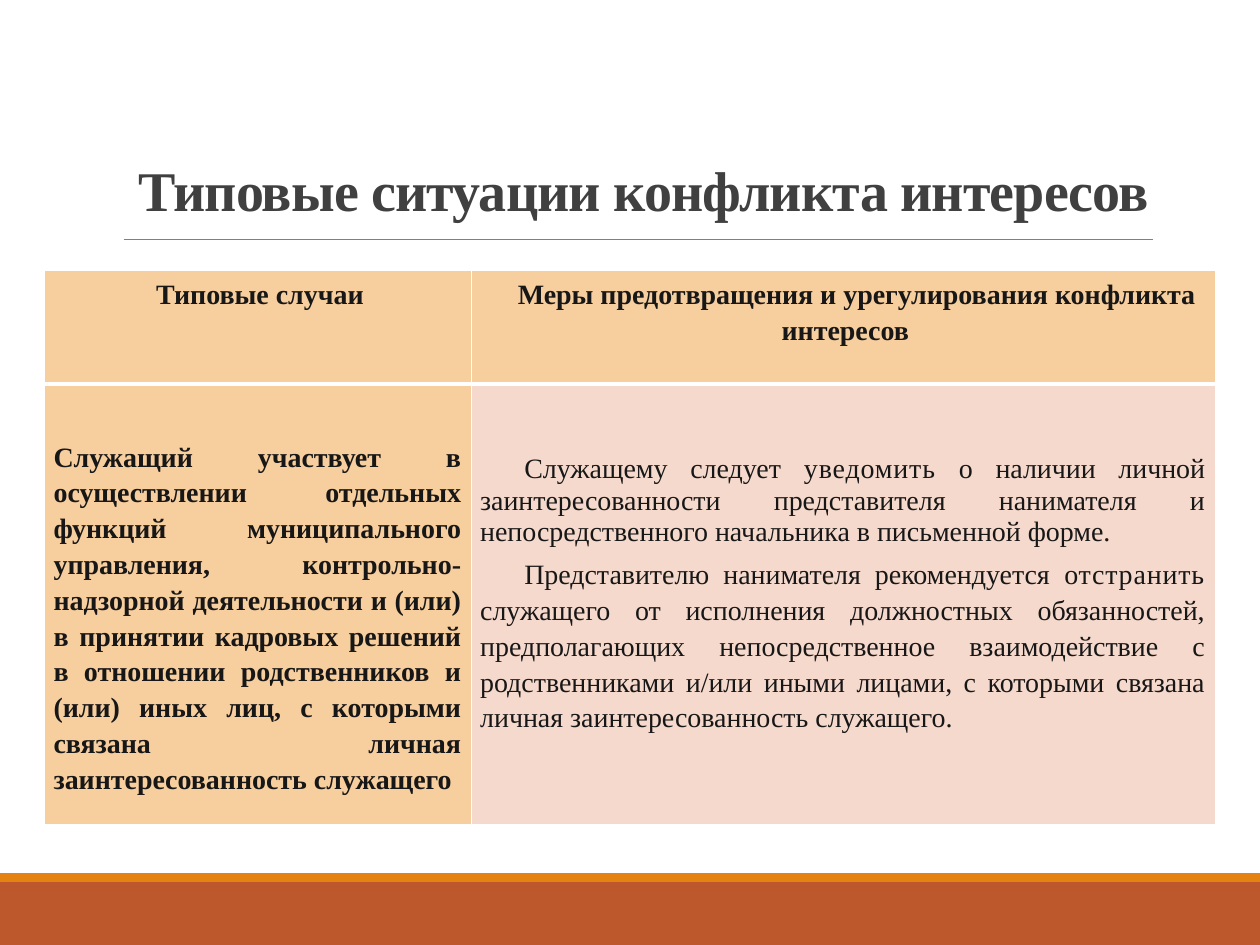
from dataclasses import dataclass

from lxml.etree import SubElement
from pptx import Presentation
from pptx.dml.color import RGBColor
from pptx.enum.shapes import MSO_CONNECTOR as Connector, MSO_SHAPE as Shape
from pptx.enum.text import MSO_ANCHOR as Anchor, MSO_AUTO_SIZE as AutoSize, PP_ALIGN as Align
from pptx.oxml.ns import qn
from pptx.util import Cm, Pt


@dataclass(frozen=True)
class Theme:
    face: str = "Times New Roman"
    title_size: int = 32
    table_size: int = 16
    title_ink: str = "404040"
    table_ink: str = "181717"
    rule: str = "808080"
    band: str = "BD582C"
    stripe: str = "E48312"
    heading_fill: str = "F7CE9D"
    measure_fill: str = "F5D9CC"
    border: str = "FFFFFF"


@dataclass(frozen=True)
class Box:
    left: float
    top: float
    width: float
    height: float

    def lengths(self):
        return Cm(self.left), Cm(self.top), Cm(self.width), Cm(self.height)


THEME = Theme()

CASE = ("Служащий участвует в осуществлении отдельных функций муниципального управления, "
        "контрольно-надзорной деятельности и (или) в принятии кадровых решений в отношении "
        "родственников и (или) иных лиц, с которыми связана личная заинтересованность служащего")
NOTIFY = [("Служащему следует ", 0), ("уведомить", 0.5),
          (" о наличии личной заинтересованности представителя нанимателя и "
           "непосредственного начальника в письменной форме.", 0)]
SUSPEND = [("Представителю нанимателя рекомендуется ", 0), ("отстранить ", 0.5),
           ("служащего от исполнения должностных обязанностей, предполагающих "
            "непосредственное взаимодействие с родственниками и/или иными лицами, "
            "с которыми связана личная заинтересованность служащего.", 0)]

HEADING = {"alignment": Align.CENTER, "line_spacing": 1.15}
JUSTIFIED = {"alignment": Align.JUSTIFY, "line_spacing": 1.15}
SPACED = {"alignment": Align.JUSTIFY, "line_spacing": 1.01, "space_after": Pt(4.3)}


def apply(target, values):
    for name, value in values.items():
        setattr(target, name, value)


def write(paragraph, pieces, layout, size, ink, bold, margin=0, indent=0):
    apply(paragraph, layout)
    properties = paragraph._p.get_or_add_pPr()
    properties.set("marL", str(Cm(margin)))
    properties.set("indent", str(Cm(indent)))
    for text, spacing in pieces:
        run = paragraph.add_run()
        run.text = text
        apply(run.font, {"name": THEME.face, "size": Pt(size), "bold": bold})
        run.font.color.rgb = RGBColor.from_string(ink)
        run._r.get_or_add_rPr().set("spc", str(int(spacing * 100)))


def add_footer(slide, box, stripe_height):
    stripe = Box(box.left, box.top, box.width, stripe_height)
    band = Box(box.left, box.top + stripe_height, box.width, box.height - stripe_height)
    for part, color in ((band, THEME.band), (stripe, THEME.stripe)):
        bar = slide.shapes.add_shape(Shape.RECTANGLE, *part.lengths())
        bar.shadow.inherit = False
        bar.fill.solid()
        bar.fill.fore_color.rgb = RGBColor.from_string(color)
        bar.line.fill.background()


def add_title(slide, box, rule_top, rule_width):
    title = slide.shapes.title
    apply(title, dict(zip(("left", "top", "width", "height"), box.lengths())))
    apply(title.text_frame, {"word_wrap": True, "auto_size": AutoSize.NONE,
                             "vertical_anchor": Anchor.BOTTOM,
                             "margin_left": Cm(0.1), "margin_right": Cm(0.1)})
    write(title.text_frame.paragraphs[0], [("Типовые ситуации конфликта интересов", -0.5)],
          {"alignment": Align.CENTER, "line_spacing": 0.85},
          THEME.title_size, THEME.title_ink, True)

    rule_y = Cm(box.top + rule_top)
    rule = slide.shapes.add_connector(Connector.STRAIGHT, Cm(box.left), rule_y,
                                      Cm(box.left + rule_width), rule_y)
    rule.line.width = Pt(0.5)
    rule.line.color.rgb = RGBColor.from_string(THEME.rule)
    SubElement(rule._element.spPr, qn("a:effectLst"))


def style_cell(cell, fill, anchor, top_inset, bottom_border):
    apply(cell, {"vertical_anchor": anchor, "margin_left": Cm(0.18), "margin_right": Cm(0.2),
                 "margin_top": Cm(top_inset), "margin_bottom": 0})
    properties = cell._tc.get_or_add_tcPr()
    for side, width in (("lnL", 1), ("lnR", 1), ("lnT", 1), ("lnB", bottom_border)):
        border = SubElement(properties, qn(f"a:{side}"), w=str(Pt(width)))
        SubElement(SubElement(border, qn("a:solidFill")), qn("a:srgbClr"), val=THEME.border)
    cell.fill.solid()
    cell.fill.fore_color.rgb = RGBColor.from_string(fill)


def add_situations(slide, box, case_width, heading_height):
    table = slide.shapes.add_table(2, 2, *box.lengths()).table
    table.horz_banding = False
    for column, width in zip(table.columns, (case_width, box.width - case_width)):
        column.width = Cm(width)
    for row, height in zip(table.rows, (heading_height, box.height - heading_height)):
        row.height = Cm(height)

    contents = {
        (0, 0): (THEME.heading_fill, Anchor.TOP, 0.1, True,
                 [([("Типовые случаи", 0)], HEADING, 0.1, 0)]),
        (0, 1): (THEME.heading_fill, Anchor.TOP, 0.1, True,
                 [([("Меры предотвращения и урегулирования конфликта интересов", 0)],
                   HEADING, 0.1, 0.46)]),
        (1, 0): (THEME.heading_fill, Anchor.MIDDLE, 0.48, True,
                 [([(CASE, 0)], JUSTIFIED, 0, 0)]),
        (1, 1): (THEME.measure_fill, Anchor.TOP, 1.4, False,
                 [(NOTIFY, SPACED, 0, 0.89), (SUSPEND, JUSTIFIED, 0, 0.89)]),
    }
    for (row, column), (fill, anchor, inset, bold, paragraphs) in contents.items():
        cell = table.cell(row, column)
        style_cell(cell, fill, anchor, inset, 3 if row == 0 else 1)
        frame = cell.text_frame
        for number, (pieces, layout, margin, indent) in enumerate(paragraphs):
            paragraph = frame.add_paragraph() if number else frame.paragraphs[0]
            write(paragraph, pieces, layout, THEME.table_size, THEME.table_ink, bold,
                  margin, indent)


def main():
    deck = Presentation()
    apply(deck, {"slide_width": Cm(25.4), "slide_height": Cm(19.05)})
    slide = deck.slides.add_slide(deck.slide_layouts[5])
    add_footer(slide, Box(0, 17.6, 25.4, 1.45), stripe_height=0.18)
    add_title(slide, Box(2.49, 2.92, 20.96, 1.7), rule_top=1.91, rule_width=20.75)
    add_situations(slide, Box(0.9, 5.45, 23.6, 11.18), case_width=8.6, heading_height=2.29)
    deck.save("out.pptx")


if __name__ == "__main__":
    main()
